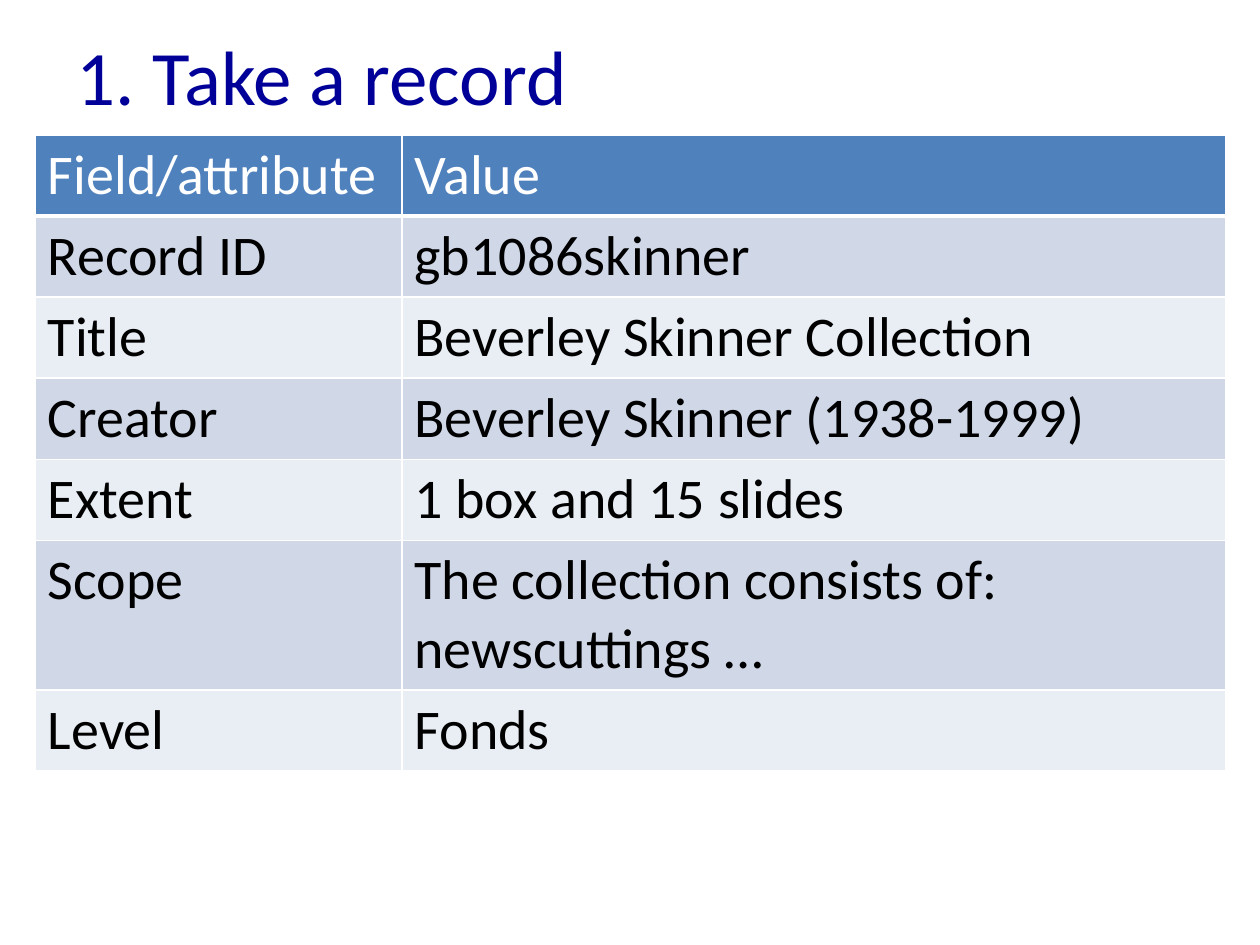
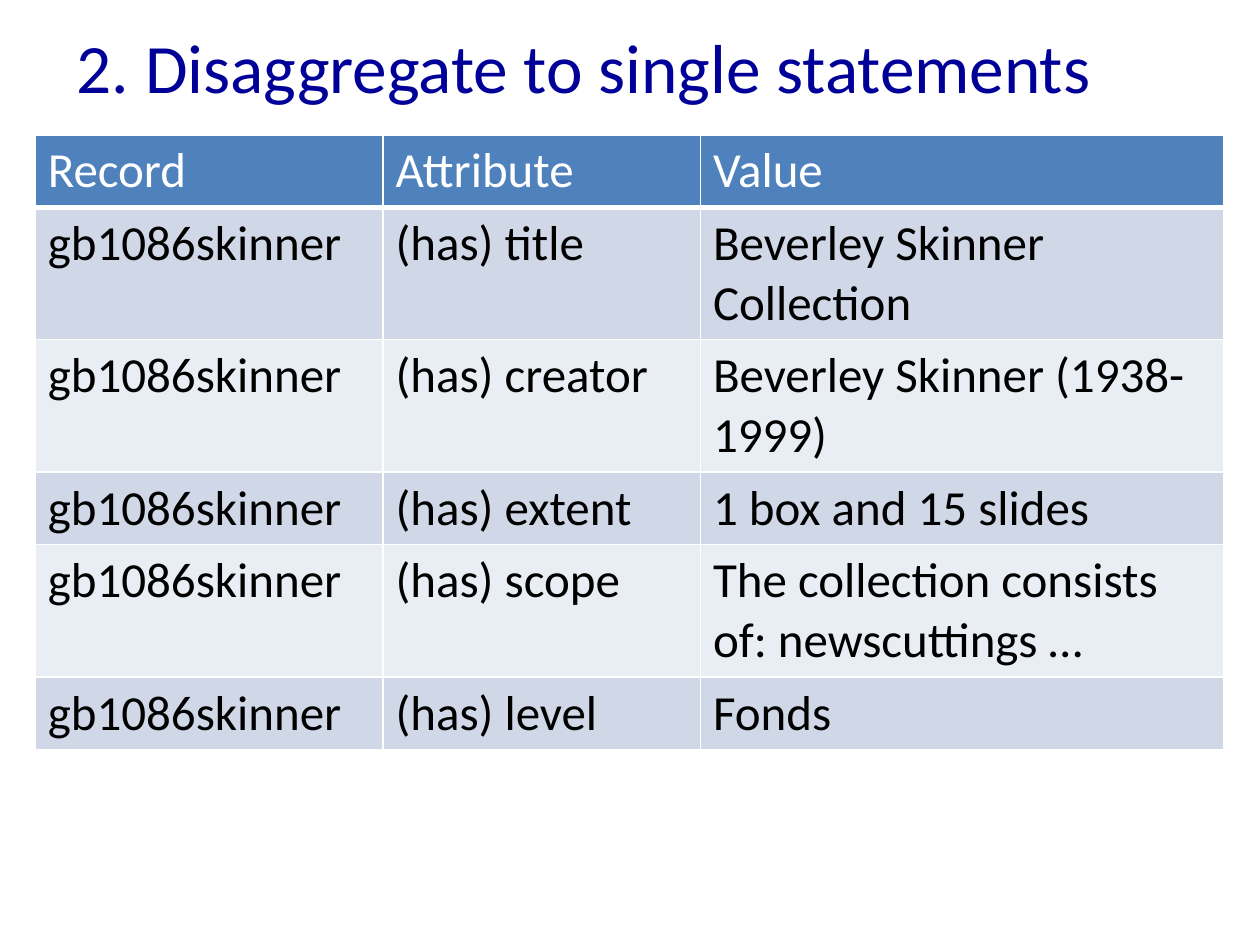
from pptx import Presentation
from pptx.dml.color import RGBColor
from pptx.enum.text import MSO_ANCHOR, MSO_AUTO_SIZE, PP_ALIGN
from pptx.oxml import parse_xml
from pptx.oxml.ns import nsdecls
from pptx.util import Inches, Pt

FONT = "Calibri"
TITLE_COLOR = "000099"
HEADER_FILL = "4F81BD"
BAND_FILLS = ("D0D8E8", "E9EDF4")
WHITE, BLACK = "FFFFFF", "000000"

RECORD_ID = "gb1086skinner"
RECORD_FIELDS = [
    ("Title", "Beverley Skinner Collection"),
    ("Creator", "Beverley Skinner (1938-1999)"),
    ("Extent", "1 box and 15 slides"),
    ("Scope", "The collection consists of: newscuttings …"),
    ("Level", "Fonds"),
]


def rgb(value):
    return RGBColor.from_string(value)


def write_text(text_frame, text, *, size, color):
    text_frame.text = text
    paragraph = text_frame.paragraphs[0]
    paragraph.alignment = PP_ALIGN.LEFT
    font = paragraph.runs[0].font
    font.name, font.size, font.bold = FONT, Pt(size), False
    font.color.rgb = rgb(color)


def set_borders(cell, bottom=1):
    """Draw white cell edges; they come before the fill in the XML."""
    properties = cell._tc.get_or_add_tcPr()
    widths = {"L": 1, "R": 1, "T": 1, "B": bottom}
    for index, (side, width) in enumerate(widths.items()):
        properties.insert(index, parse_xml(
            f'<a:ln{side} {nsdecls("a")} w="{Pt(width)}"><a:solidFill>'
            f'<a:srgbClr val="{WHITE}"/></a:solidFill></a:ln{side}>'))


class Deck:
    def __init__(self):
        self.presentation = Presentation()
        self.presentation.slide_width = Inches(10)
        self.presentation.slide_height = Inches(7.5)
        self.slide = None

    def add_slide(self, title, *, height, size):
        layout = self.presentation.slide_layouts[5]
        self.slide = self.presentation.slides.add_slide(layout)
        shape = self.slide.shapes.title
        shape.left, shape.top = Inches(0.51), Inches(0.13)
        shape.width, shape.height = Inches(9), Inches(height)
        shape.text_frame.auto_size = MSO_AUTO_SIZE.NONE
        shape.text_frame.vertical_anchor = MSO_ANCHOR.MIDDLE
        write_text(shape.text_frame, title, size=size, color=TITLE_COLOR)

    def add_table(self, rows, *, widths, row_height, size):
        table = self.slide.shapes.add_table(
            len(rows), len(widths), Inches(0.28), Inches(1.07),
            Inches(sum(widths)), Inches(row_height * len(rows))).table
        for column, width in zip(table.columns, widths):
            column.width = Inches(width)
        for row_index, row in enumerate(rows):
            header = row_index == 0
            fill = HEADER_FILL if header else BAND_FILLS[(row_index - 1) % 2]
            for column_index, text in enumerate(row):
                cell = table.cell(row_index, column_index)
                cell.fill.solid()
                cell.fill.fore_color.rgb = rgb(fill)
                set_borders(cell, bottom=3 if header else 1)
                write_text(cell.text_frame, text, size=size,
                           color=WHITE if header else BLACK)


def main():
    deck = Deck()

    # The whole record, one field per row
    deck.add_slide("1. Take a record", height=0.93, size=44)
    deck.add_table(
        [("Field/attribute", "Value"), ("Record ID", RECORD_ID), *RECORD_FIELDS],
        widths=(2.91, 6.54), row_height=0.55, size=32)

    # The same fields as separate statements about the record
    deck.add_slide("2. Disaggregate to single statements", height=0.79, size=39.6)
    statements = [(RECORD_ID, f"(has) {field.lower()}", value)
                  for field, value in RECORD_FIELDS]
    deck.add_table([("Record", "Attribute", "Value"), *statements],
                   widths=(2.76, 2.52, 4.15), row_height=0.41, size=28)

    deck.presentation.save("out.pptx")


if __name__ == "__main__":
    main()
